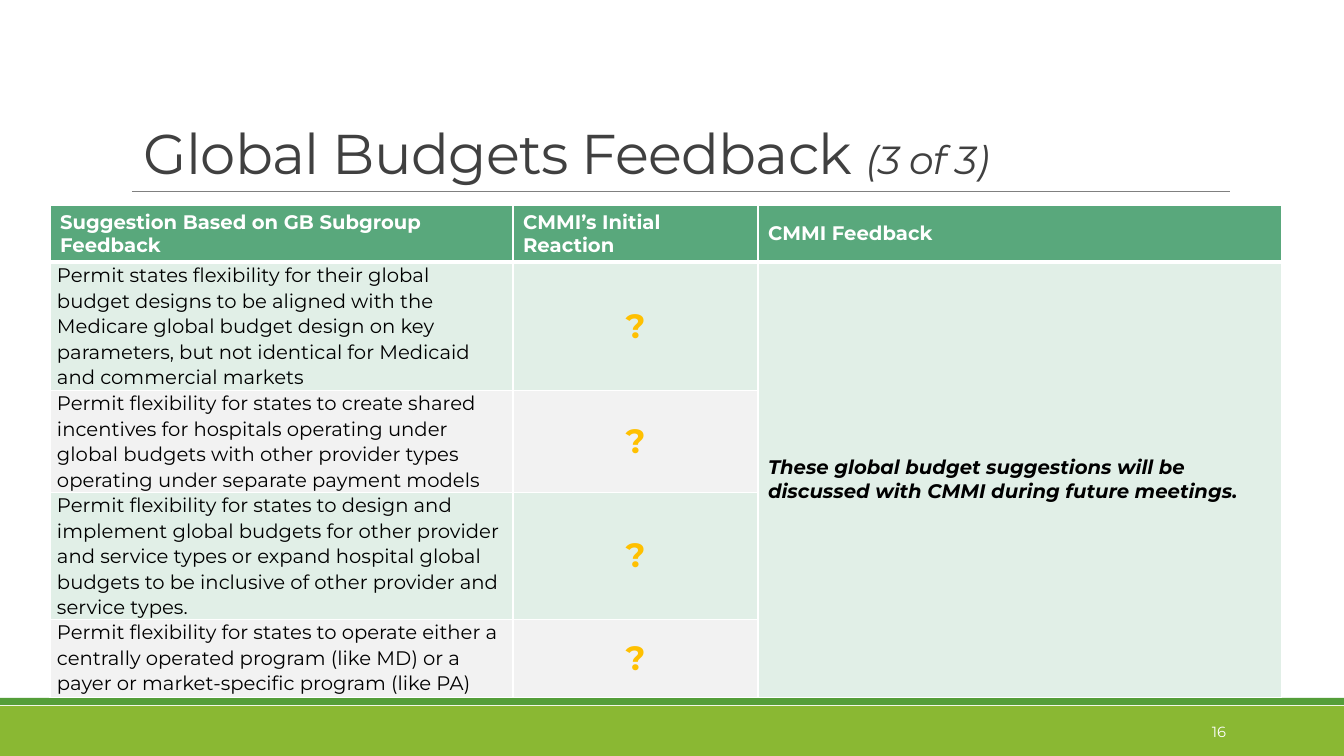
import pptx
import pptx.dml.color
import pptx.enum.shapes
import pptx.enum.text
import pptx.oxml
import pptx.oxml.ns
import pptx.util
from lxml import etree

EMU_PER_PX = 914400 / 100.8
ALIGN = pptx.enum.text.PP_ALIGN
ANCHOR = pptx.enum.text.MSO_ANCHOR

HEADERS = ["Suggestion Based on GB Subgroup Feedback", "CMMI’s Initial Reaction", "CMMI Feedback"]
SUGGESTIONS = [
    "Permit states flexibility for their global budget designs to be aligned with the Medicare "
    "global budget design on key parameters, but not identical for Medicaid and commercial markets",
    "Permit flexibility for states to create shared incentives for hospitals operating under "
    "global budgets with other provider types operating under separate payment models",
    "Permit flexibility for states to design and implement global budgets for other provider and "
    "service types or expand hospital global budgets to be inclusive of other provider and service types.",
    "Permit flexibility for states to operate either a centrally operated program (like MD) or a "
    "payer or market-specific program (like PA)",
]
FEEDBACK = "These global budget suggestions will be discussed with CMMI during future meetings."
COLUMN_WIDTHS = [463, 245, 524]
ROW_HEIGHTS = [57, 128, 102, 127, 78]
HEADER_FILL = "59A87C"
BAND_FILLS = ["E1EFE7", "F2F2F2"]


def px(length):
    return pptx.util.Emu(round(length * EMU_PER_PX))


def color(value):
    return pptx.dml.color.RGBColor.from_string(value)


class SlideBuilder:
    font_name = "Montserrat"

    def __init__(self, slide):
        self.slide = slide

    def style(self, font, size, fill, bold=False, italic=False):
        font.name = self.font_name
        font.size = pptx.util.Pt(size)
        font.color.rgb = color(fill)
        font.bold = bold
        font.italic = italic

    def bar(self, left, top, width, height, fill):
        shape = self.slide.shapes.add_shape(
            pptx.enum.shapes.MSO_SHAPE.RECTANGLE, px(left), px(top), px(width), px(height))
        shape.shadow.inherit = False
        shape.fill.solid()
        shape.fill.fore_color.rgb = color(fill)
        shape.line.fill.background()

    def rule(self, left, right, y, fill, weight):
        line = self.slide.shapes.add_connector(
            pptx.enum.shapes.MSO_CONNECTOR.STRAIGHT, px(left), px(y), px(right), px(y))
        line.line.color.rgb = color(fill)
        line.line.width = pptx.util.Pt(weight)
        etree.SubElement(line._element.spPr, pptx.oxml.ns.qn("a:effectLst"))

    def text_box(self, left, top, width, height, anchor):
        """Add a wrapping text box and return its first paragraph."""
        box = self.slide.shapes.add_textbox(px(left), px(top), px(width), px(height))
        box.text_frame.word_wrap = True
        box.text_frame.vertical_anchor = anchor
        return box.text_frame.paragraphs[0]

    def title(self, left, top, width, height, main, suffix):
        paragraph = self.text_box(left, top, width, height, ANCHOR.BOTTOM)
        paragraph.line_spacing = 0.85
        for text, size, italic in [(main, 40, False), (suffix, 28, True)]:
            run = paragraph.add_run()
            run.text = text
            self.style(run.font, size, "404040", italic=italic)
            run._r.get_or_add_rPr().set("spc", "-50")

    def page_number(self, left, top, width, height, number):
        paragraph = self.text_box(left, top, width, height, ANCHOR.MIDDLE)
        paragraph.text = number
        paragraph.alignment = ALIGN.RIGHT
        self.style(paragraph.font, 10.5, "FFFFFF")

    def table(self, left, top, column_widths, row_heights):
        frame = self.slide.shapes.add_table(
            len(row_heights), len(column_widths), px(left), px(top),
            px(sum(column_widths)), px(sum(row_heights)))
        for column, width in zip(frame.table.columns, column_widths):
            column.width = px(width)
        for row, height in zip(frame.table.rows, row_heights):
            row.height = px(height)
        return frame.table

    def cell_box(self, cell, fill, top_weight=1, bottom_weight=1):
        """Give a cell its white borders and its fill."""
        properties = cell._tc.get_or_add_tcPr()
        weights = {"lnL": 1, "lnR": 1, "lnT": top_weight, "lnB": bottom_weight}
        for side, weight in weights.items():
            properties.append(pptx.oxml.parse_xml(
                f'<a:{side} {pptx.oxml.ns.nsdecls("a")} w="{pptx.util.Pt(weight)}">'
                f'<a:solidFill><a:srgbClr val="FFFFFF"/></a:solidFill></a:{side}>'))
        cell.fill.solid()
        cell.fill.fore_color.rgb = color(fill)

    def cell_text(self, cell, text, size, fill, bold=False, italic=False, align=ALIGN.LEFT):
        cell.vertical_anchor = ANCHOR.MIDDLE
        paragraph = cell.text_frame.paragraphs[0]
        paragraph.text = text
        paragraph.alignment = align
        self.style(paragraph.font, size, fill, bold, italic)
        return paragraph

    def suggestion(self, cell, text):
        paragraph = self.cell_text(cell, text, 14, "000000")
        paragraph.line_spacing = 1.07
        paragraph.space_after = pptx.util.Pt(2)
        cell.vertical_anchor = ANCHOR.TOP
        cell.margin_left = cell.margin_right = px(7)
        cell.margin_top = cell.margin_bottom = 0


def main():
    presentation = pptx.Presentation()
    presentation.slide_width = px(1344)
    presentation.slide_height = px(756)
    builder = SlideBuilder(presentation.slides.add_slide(presentation.slide_layouts[6]))

    builder.bar(0, 706, 1344, 50, "8AB833")
    builder.bar(0, 698, 1344, 7, "549E39")
    builder.rule(132, 1230, 191, "808080", 0.5)
    builder.title(134, 31, 1095, 160, "Global Budgets Feedback ", "(3 of 3)")
    builder.page_number(1092, 712, 144, 40, "16")

    table = builder.table(50, 205, COLUMN_WIDTHS, ROW_HEIGHTS)
    for column, header in enumerate(HEADERS):
        cell = table.cell(0, column)
        builder.cell_box(cell, HEADER_FILL, bottom_weight=3)
        builder.cell_text(cell, header, 14, "FFFFFF", bold=True)

    for row, suggestion in enumerate(SUGGESTIONS, start=1):
        band = BAND_FILLS[(row - 1) % 2]
        for column, fill in enumerate([band, band, BAND_FILLS[0]]):
            builder.cell_box(table.cell(row, column), fill, top_weight=3 if row == 1 else 1)
        builder.suggestion(table.cell(row, 0), suggestion)
        builder.cell_text(table.cell(row, 1), "?", 24, "FFC000", bold=True, align=ALIGN.CENTER)

    table.cell(1, 2).merge(table.cell(len(SUGGESTIONS), 2))
    builder.cell_text(table.cell(1, 2), FEEDBACK, 14, "000000", bold=True, italic=True)

    presentation.save("out.pptx")


if __name__ == "__main__":
    main()
